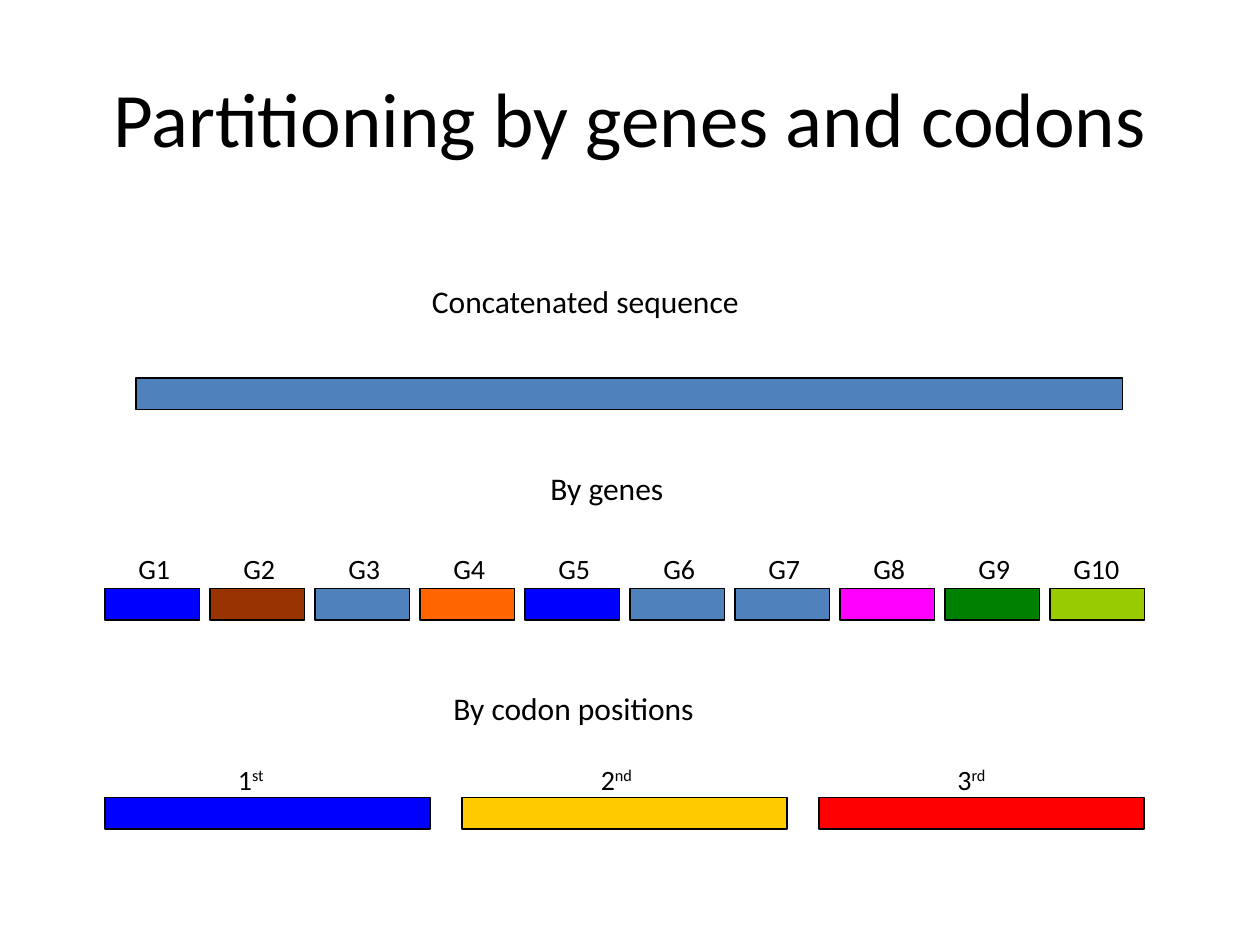
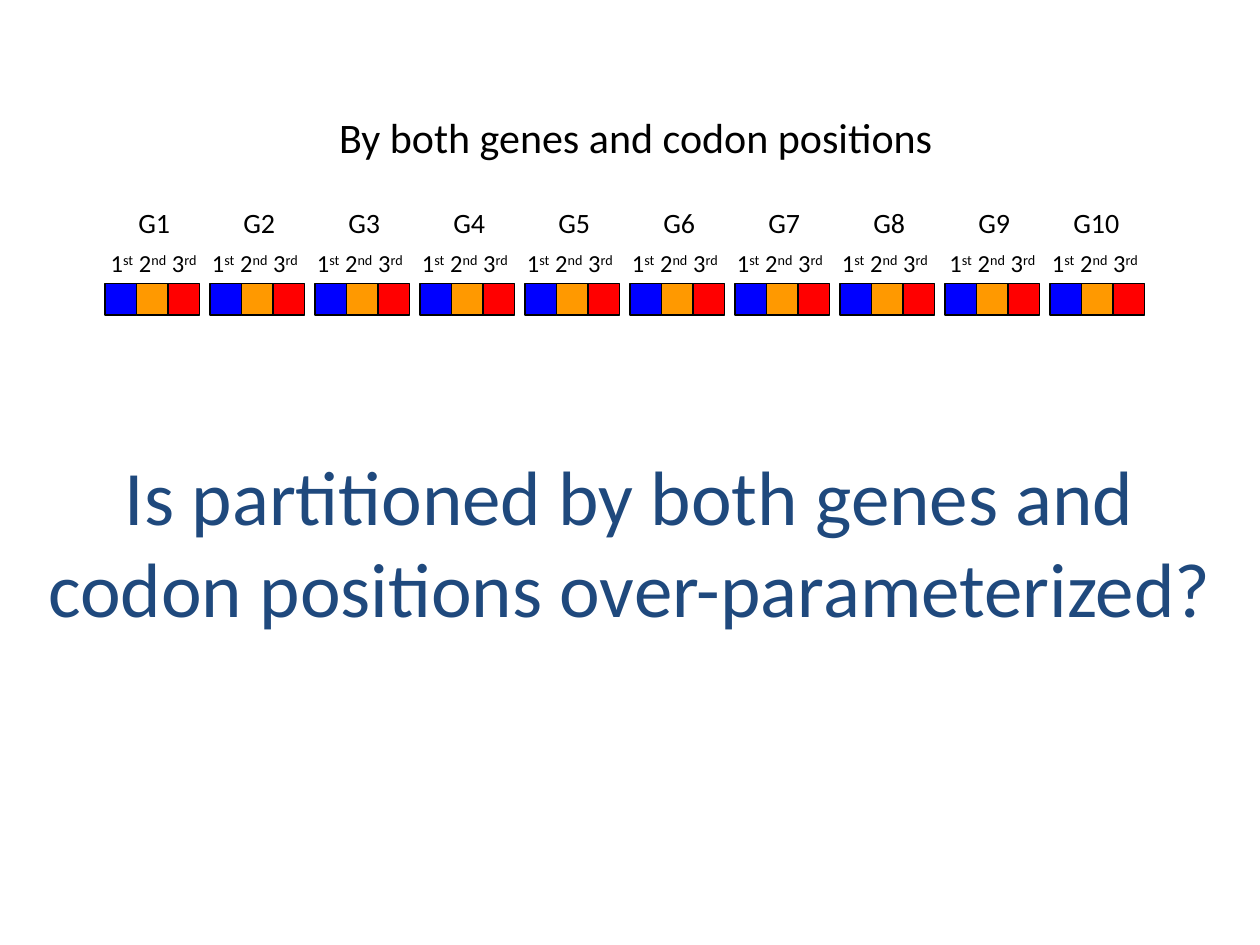
import pptx
import pptx.dml.color
import pptx.enum.shapes
import pptx.enum.text
import pptx.util

Inches = pptx.util.Inches
RGBColor = pptx.dml.color.RGBColor
ALIGN = pptx.enum.text.PP_ALIGN
ANCHOR = pptx.enum.text.MSO_ANCHOR

BLACK = RGBColor(0x00, 0x00, 0x00)
NAVY = RGBColor(0x1F, 0x49, 0x7D)
STEEL = RGBColor(0x4F, 0x81, 0xBD)
BLUE = RGBColor(0x00, 0x00, 0xFF)
BROWN = RGBColor(0x99, 0x33, 0x00)
ORANGE = RGBColor(0xFF, 0x66, 0x00)
AMBER = RGBColor(0xFF, 0x99, 0x00)
GOLD = RGBColor(0xFF, 0xCC, 0x00)
MAGENTA = RGBColor(0xFF, 0x00, 0xFF)
GREEN = RGBColor(0x00, 0x80, 0x00)
LIME = RGBColor(0x99, 0xCC, 0x00)
RED = RGBColor(0xFF, 0x00, 0x00)

GENE_COLORS = [BLUE, BROWN, STEEL, ORANGE, BLUE, STEEL, STEEL, MAGENTA, GREEN, LIME]
GENE_COUNT = len(GENE_COLORS)
GENE_PITCH = 5 / 6
ROW_LEFT = 5 / 6
GENE_WIDTH = 0.75
BAR_HEIGHT = 0.25
CODON_PITCH = 17 / 6
ORDINALS = [("1", "st"), ("2", "nd"), ("3", "rd")]


class Deck:
    """Holds the shared style and the current slide."""

    def __init__(self):
        self.presentation = pptx.Presentation()
        self.presentation.slide_width = Inches(10)
        self.presentation.slide_height = Inches(7.5)
        self.font = "Calibri"
        self.slide = None

    def new_slide(self):
        self.slide = self.presentation.slides.add_slide(self.presentation.slide_layouts[6])

    def text(self, left, top, width, height, runs, size, color=BLACK,
             align=ALIGN.LEFT, anchor=ANCHOR.TOP):
        shape = self.slide.shapes.add_textbox(
            Inches(left), Inches(top), Inches(width), Inches(height))
        frame = shape.text_frame
        frame.word_wrap = True
        frame.vertical_anchor = anchor
        paragraph = frame.paragraphs[0]
        paragraph.alignment = align
        for words, raised in runs:
            run = paragraph.add_run()
            run.text = words
            run.font.name = self.font
            run.font.size = pptx.util.Pt(size)
            run.font.color.rgb = color
            if raised:
                run._r.get_or_add_rPr().set("baseline", "30000")

    def title(self, left, top, width, height, words, size=44, color=BLACK):
        self.text(left, top, width, height, [(words, False)], size, color,
                  ALIGN.CENTER, ANCHOR.MIDDLE)

    def heading(self, left, top, width, words):
        self.text(left, top, width, 0.5, [(words, False)], 18)

    def label(self, left, top, width, runs):
        self.text(left, top, width, 0.37, runs, 16, align=ALIGN.JUSTIFY)

    def bar(self, left, top, width, color):
        shape = self.slide.shapes.add_shape(
            pptx.enum.shapes.MSO_SHAPE.RECTANGLE,
            Inches(left), Inches(top), Inches(width), Inches(BAR_HEIGHT))
        shape.shadow.inherit = False
        shape.fill.solid()
        shape.fill.fore_color.rgb = color
        shape.line.color.rgb = BLACK
        shape.line.width = pptx.util.Pt(0.75)

    def gene_labels(self, top):
        for index in range(GENE_COUNT - 1):
            self.label(1 + index * GENE_PITCH, top, 0.47, [(f"G{index + 1}", False)])
        self.label(8.42, top, 0.58, [(f"G{GENE_COUNT}", False)])


def build_partitions(deck):
    deck.new_slide()
    deck.title(0.5, 0.3, 9, 1.25, "Partitioning by genes and codons")

    deck.heading(3.33, 2.19, 3.4, "Concatenated sequence")
    deck.bar(1.08, 3, 7.83, STEEL)

    deck.heading(4.27, 3.67, 1.43, "By genes")
    deck.gene_labels(4.33)
    for index, color in enumerate(GENE_COLORS):
        deck.bar(ROW_LEFT + index * GENE_PITCH, 4.67, GENE_WIDTH, color)

    deck.heading(3.5, 5.42, 2.77, "By codon positions")
    label_spans = [(1.79, 0.47), (4.67, 0.67), (7.5, 0.58)]
    codon_rows = zip([BLUE, GOLD, RED], ORDINALS, label_spans)
    for index, (color, (digit, suffix), (left, width)) in enumerate(codon_rows):
        deck.bar(ROW_LEFT + index * CODON_PITCH, 6.33, 2.58, color)
        deck.label(left, 6, width, [(digit, False), (suffix, True)])


def build_combined(deck):
    deck.new_slide()
    deck.title(0.92, 0.67, 8.25, 0.83, "By both genes and codon positions", 24)
    deck.gene_labels(1.58)

    ordinal_runs = []
    for digit, suffix in ORDINALS:
        lead = " " if ordinal_runs else ""
        ordinal_runs += [(lead + digit, False), (suffix, True)]

    label_nudges = {0: 0.03, 8: 0.02}
    for gene in range(GENE_COUNT):
        offset = gene * GENE_PITCH
        for codon, color in enumerate([BLUE, AMBER, RED]):
            deck.bar(ROW_LEFT + offset + codon * GENE_WIDTH / 3, 2.25, GENE_WIDTH / 3, color)
        deck.text(0.75 + offset + label_nudges.get(gene, 0), 1.92, 0.97, 0.33,
                  ordinal_runs, 14)

    deck.title(0.25, 3.25, 9.5, 2.08,
               "Is partitioned by both genes and codon positions over-parameterized?",
               color=NAVY)


def main():
    deck = Deck()
    build_partitions(deck)
    build_combined(deck)
    deck.presentation.save("out.pptx")


if __name__ == "__main__":
    main()
